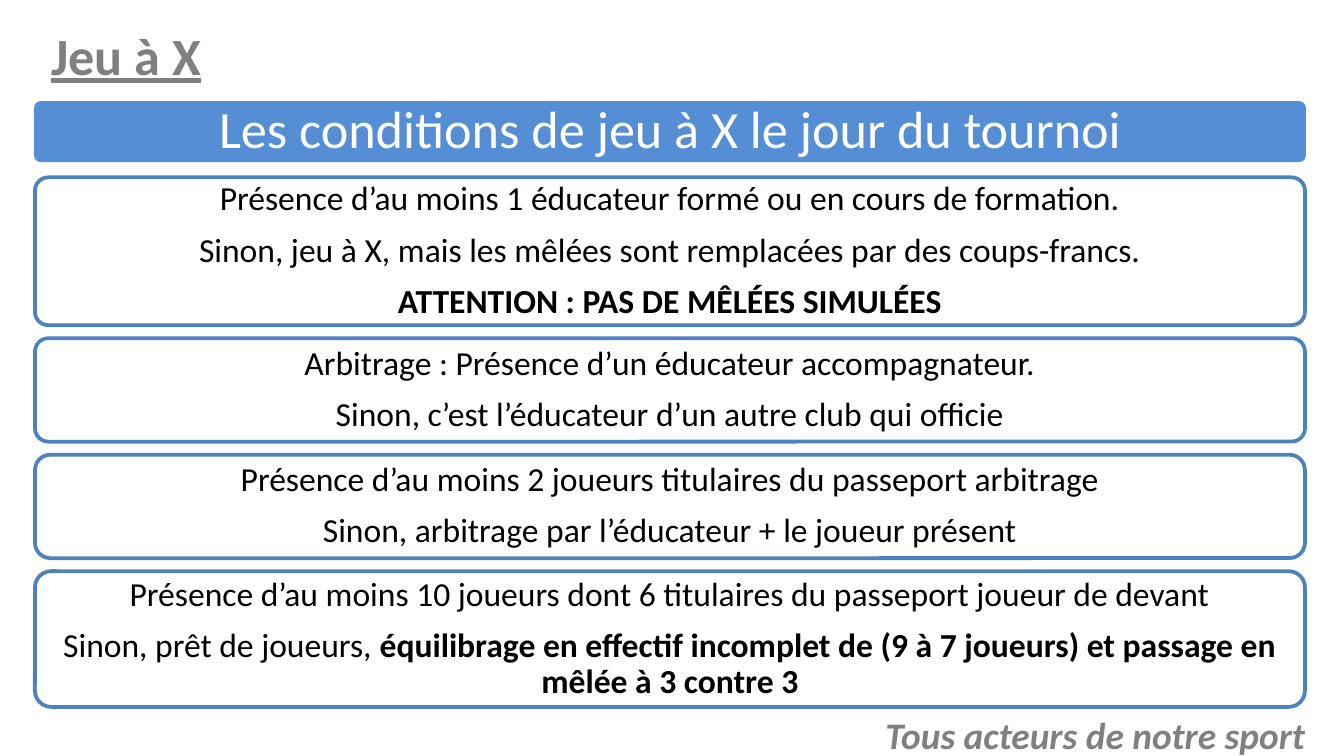
from pptx import Presentation
from pptx.dml.color import RGBColor
from pptx.enum import shapes, text
from pptx.util import Inches, Pt

COLORS = {"banner": "558ED5", "border": "4F81BD", "panel": "FFFFFF",
          "light": "FFFFFF", "dark": "000000", "grey": "808080"}
CENTER, LEFT = text.PP_ALIGN.CENTER, text.PP_ALIGN.LEFT


def write(frame, lines, color, font, paragraph_format):
    frame.word_wrap = True
    frame.auto_size = text.MSO_AUTO_SIZE.NONE
    for i, runs in enumerate(lines):
        paragraph = frame.paragraphs[0] if i == 0 else frame.add_paragraph()
        for key, value in paragraph_format.items():
            setattr(paragraph, key, value)
        for words, bold in runs:
            run = paragraph.add_run()
            run.text = words
            for key, value in {"name": "Calibri", "bold": bold, **font}.items():
                setattr(run.font, key, value)
            run.font.color.rgb = RGBColor.from_string(COLORS[color])


def add_panel(top, height, corner, fill, border, border_width):
    panel = slide.shapes.add_shape(shapes.MSO_SHAPE.ROUNDED_RECTANGLE,
                                   left, Inches(top), width, Inches(height))
    panel.adjustments[0] = corner
    panel.shadow.inherit = False
    panel.fill.solid()
    panel.fill.fore_color.rgb = RGBColor.from_string(COLORS[fill])
    panel.line.color.rgb = RGBColor.from_string(COLORS[border])
    panel.line.width = Pt(border_width)
    frame = panel.text_frame
    frame.vertical_anchor = text.MSO_ANCHOR.MIDDLE
    for side in ("left", "right", "top", "bottom"):
        setattr(frame, f"margin_{side}", Inches(0.08))
    return frame


deck = Presentation()
deck.slide_width = Inches(10)
deck.slide_height = deck.slide_width * 9 // 16
slide = deck.slides.add_slide(deck.slide_layouts[5])
left, width = Inches(0.26), Inches(9.45)

heading = slide.shapes.title
for key, value in {"left": 0.28, "top": 0.14, "width": 9.45, "height": 0.53}.items():
    setattr(heading, key, Inches(value))
heading.text_frame.vertical_anchor = text.MSO_ANCHOR.MIDDLE
write(heading.text_frame, [[("Jeu à X", True)]], "grey",
      {"size": Pt(28), "underline": True}, {"alignment": LEFT})

banner = add_panel(0.76, 0.44, 0.1, "banner", "banner", 1)
write(banner, [[("Les conditions de jeu à X le jour du tournoi", False)]], "light",
      {"size": Pt(28)}, {"alignment": CENTER, "line_spacing": 0.9, "space_after": Pt(10)})

conditions = [
    (1.1, 0.09, [
        [("Présence d’au moins 1 éducateur formé ou en cours de formation.", False)],
        [("Sinon, jeu à X, mais les mêlées sont remplacées par des coups-francs.", False)],
        [("ATTENTION : PAS DE MÊLÉES SIMULÉES", True)]]),
    (0.77, 0.13, [
        [("Arbitrage : Présence d’un éducateur accompagnateur.", False)],
        [("Sinon, c’est l’éducateur d’un autre club qui officie", False)]]),
    (0.77, 0.15, [
        [("Présence d’au moins 2 joueurs titulaires du passeport arbitrage", False)],
        [("Sinon, arbitrage par l’éducateur + le joueur présent", False)]]),
    (1.01, 0.12, [
        [("Présence d’au moins 10 joueurs dont 6 titulaires du passeport joueur de devant", False)],
        [("Sinon, prêt de joueurs, ", False),
         ("équilibrage en effectif incomplet de (9 à 7 joueurs) et passage en mêlée à 3 contre 3",
          True)]]),
]
top, bottom = 1.32, 5.26
gap = (bottom - top - sum(height for height, _, _ in conditions)) / (len(conditions) - 1)
for height, corner, lines in conditions:
    condition = add_panel(top, height, corner, "panel", "border", 2)
    write(condition, lines, "dark", {"size": Pt(18)},
          {"alignment": CENTER, "line_spacing": 0.9, "space_after": Pt(8)})
    top += height + gap

motto = slide.shapes.add_textbox(Inches(6.42), Inches(5.25), Inches(3.46), Inches(0.37))
write(motto.text_frame, [[("Tous acteurs de notre sport", True)]], "grey",
      {"size": Pt(20), "italic": True}, {"alignment": CENTER})

deck.save("out.pptx")
